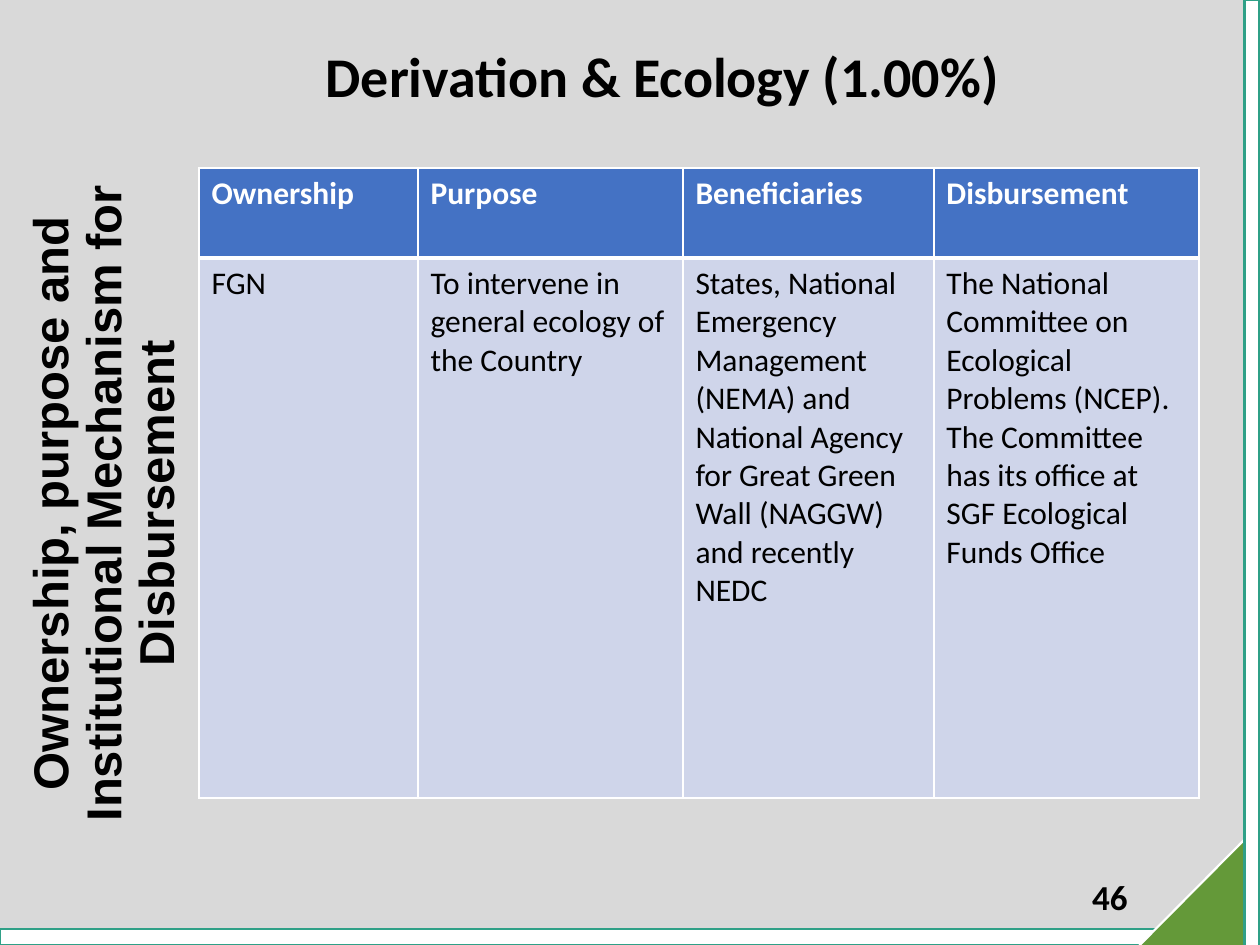
"""Build the Derivation & Ecology slide."""
from dataclasses import dataclass

from lxml.etree import SubElement
from pptx import Presentation
from pptx.dml.color import RGBColor
from pptx.enum.shapes import MSO_SHAPE
from pptx.enum.text import MSO_ANCHOR, PP_ALIGN
from pptx.oxml.ns import qn
from pptx.util import Pt

TITLE = "Derivation & Ecology (1.00%)"
SIDE = "Ownership, purpose and Institutional Mechanism for Disbursement"
PAGE = "46"
ROWS = [
    ("Ownership", "Purpose", "Beneficiaries", "Disbursement"),
    (
        "FGN",
        "To intervene in general ecology of the Country",
        "States, National Emergency Management (NEMA) and National Agency "
        "for Great Green Wall (NAGGW) and recently NEDC",
        "The National Committee on Ecological Problems (NCEP). The Committee "
        "has its office at SGF Ecological Funds Office",
    ),
]
WIDTHS = (219, 265, 251, 265)
HEIGHTS = (90, 540)
DECOR = [
    (MSO_SHAPE.RECTANGLE, (0, 929, 1260, 16), 0, "white", "teal"),
    (MSO_SHAPE.RIGHT_TRIANGLE, (1119, 835, 131, 130), 270, "green", "white"),
    (MSO_SHAPE.RECTANGLE, (764, 480, 976, 15), 270, "white", "teal"),
]


@dataclass(frozen=True)
class Theme:
    back: str = "D9D9D9"
    white: str = "FFFFFF"
    black: str = "000000"
    teal: str = "2FA087"
    green: str = "649939"
    head: str = "4472C4"
    body: str = "CFD5EA"
    font: str = "Calibri"
    side: str = "Arial"
    title_size: int = 32
    side_size: int = 28
    page_size: int = 20
    cell_size: int = 18
    edge: float = 1.25


THEME = Theme()
SCALE = 914400 // 126


def px(*nums):
    return [num * SCALE for num in nums]


def paint(fill, tint):
    fill.solid()
    fill.fore_color.rgb = RGBColor.from_string(tint)


def write(frame, text, size, align=PP_ALIGN.LEFT, bold=True,
          tint=THEME.black, face=THEME.font):
    frame.word_wrap = True
    par = frame.paragraphs[0]
    par.alignment = align
    run = par.add_run()
    run.text = text
    font = run.font
    font.name, font.size, font.bold = face, Pt(size), bold
    font.color.rgb = RGBColor.from_string(tint)
    return par


def border(cell, row):
    props = cell._tc.get_or_add_tcPr()
    sides = {"lnL": 1, "lnR": 1, "lnT": 3 if row else 1, "lnB": 1 if row else 3}
    for spot, (side, width) in enumerate(sides.items()):
        line = SubElement(props, qn(f"a:{side}"), w=str(Pt(width)))
        fill = SubElement(line, qn("a:solidFill"))
        SubElement(fill, qn("a:srgbClr"), val=THEME.white)
        props.insert(spot, line)


def add_decor(slide):
    for kind, box, turn, fill, line in DECOR:
        shape = slide.shapes.add_shape(kind, *px(*box))
        shape.rotation = turn
        shape.shadow.inherit = False
        paint(shape.fill, getattr(THEME, fill))
        paint(shape.line.fill, getattr(THEME, line))
        shape.line.width = Pt(THEME.edge)


def add_title(slide):
    title = slide.shapes.title
    title.left, title.top, title.width, title.height = px(102, 21, 1121, 108)
    title.text_frame.vertical_anchor = MSO_ANCHOR.MIDDLE
    write(title.text_frame, TITLE, THEME.title_size, PP_ALIGN.CENTER)


def add_grid(slide):
    box = px(199, 168, sum(WIDTHS), sum(HEIGHTS))
    table = slide.shapes.add_table(len(ROWS), len(WIDTHS), *box).table
    for col, width in zip(table.columns, WIDTHS):
        col.width = width * SCALE
    for row, (texts, height) in enumerate(zip(ROWS, HEIGHTS)):
        table.rows[row].height = height * SCALE
        top = row == 0
        for col, text in enumerate(texts):
            cell = table.cell(row, col)
            paint(cell.fill, THEME.head if top else THEME.body)
            border(cell, row)
            write(cell.text_frame, text, THEME.cell_size, bold=top,
                  tint=THEME.white if top else THEME.black)


def add_side(slide):
    frame = slide.shapes.add_textbox(*px(10, 136, 189, 735)).text_frame
    frame._txBody.bodyPr.set("vert", "vert270")
    frame.margin_left = 16 * SCALE
    par = write(frame, SIDE, THEME.side_size, PP_ALIGN.CENTER, face=THEME.side)
    par.line_spacing = 0.9


def add_page(slide):
    frame = slide.shapes.add_textbox(*px(1061, 872, 79, 50)).text_frame
    frame.vertical_anchor = MSO_ANCHOR.MIDDLE
    write(frame, PAGE, THEME.page_size, PP_ALIGN.RIGHT)


def main():
    deck = Presentation()
    deck.slide_width, deck.slide_height = px(1260, 945)
    slide = deck.slides.add_slide(deck.slide_layouts[5])
    paint(slide.background.fill, THEME.back)
    for step in (add_decor, add_page, add_title, add_grid, add_side):
        step(slide)
    deck.save("out.pptx")


if __name__ == "__main__":
    main()
